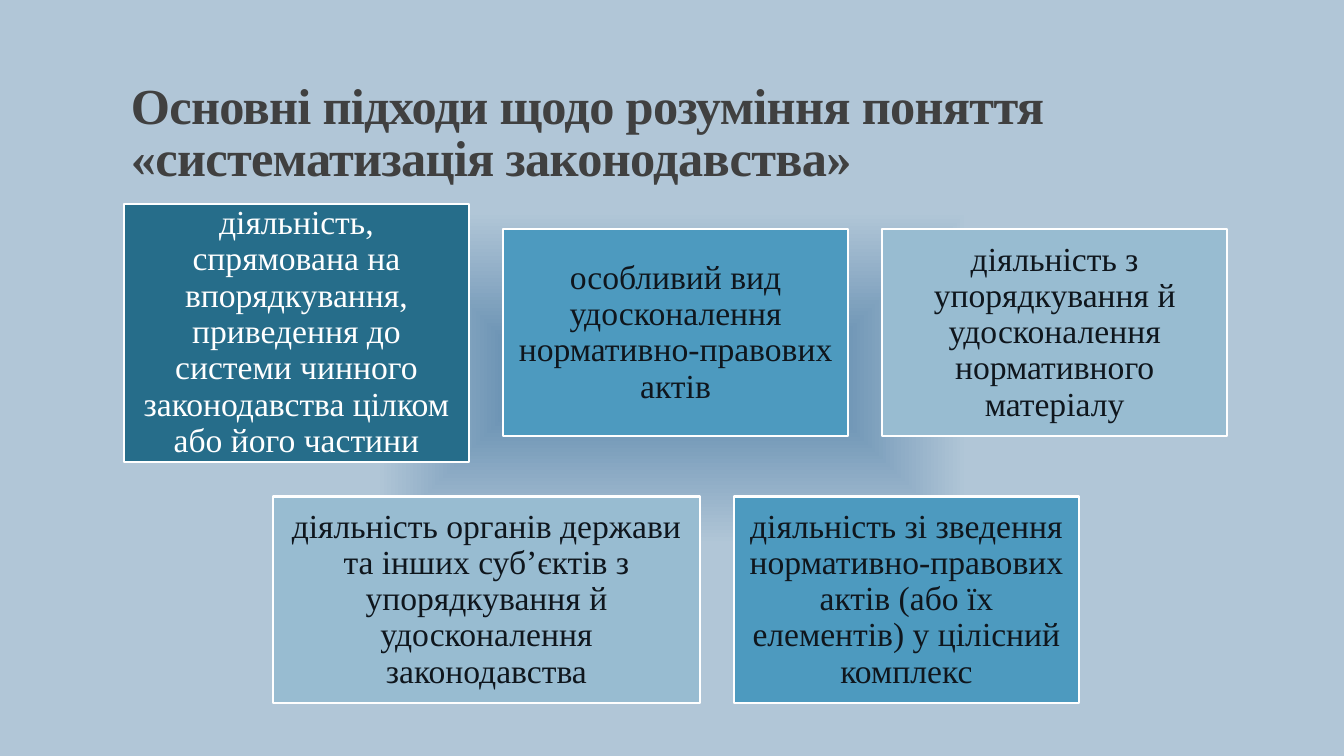
import pptx
import pptx.dml.color
import pptx.enum.shapes
import pptx.enum.text
import pptx.oxml
import pptx.util

Inches = pptx.util.Inches
Pt = pptx.util.Pt
RGBColor = pptx.dml.color.RGBColor

FONT = "Times New Roman"
TITLE_GREY = RGBColor(0x40, 0x40, 0x40)
DARK_TEXT = RGBColor(0x0F, 0x16, 0x1D)
WHITE = RGBColor(0xFF, 0xFF, 0xFF)
TEAL = RGBColor(0x26, 0x6D, 0x8A)
BLUE = RGBColor(0x4D, 0x9A, 0xBF)
PALE_BLUE = RGBColor(0x98, 0xBC, 0xD1)

GRADIENT_XML = """
<a:gradFill xmlns:a="http://schemas.openxmlformats.org/drawingml/2006/main" rotWithShape="1">
  <a:gsLst>
    <a:gs pos="0"><a:srgbClr val="5884AA"><a:alpha val="80000"/></a:srgbClr></a:gs>
    <a:gs pos="44000"><a:srgbClr val="B1C6D7"/></a:gs>
    <a:gs pos="100000"><a:srgbClr val="B1C6D7"/></a:gs>
  </a:gsLst>
  <a:path path="shape"><a:fillToRect l="50000" t="50000" r="50000" b="50000"/></a:path>
</a:gradFill>"""


def style_text(paragraph, size, color, line_spacing):
    paragraph.line_spacing = line_spacing
    font = paragraph.runs[0].font
    font.name = FONT
    font.size = Pt(size)
    font.color.rgb = color
    return font


presentation = pptx.Presentation()
presentation.slide_width = Inches(13.33)
presentation.slide_height = Inches(7.5)
slide = presentation.slides.add_slide(presentation.slide_layouts[6])

# Background glow
slide.background.fill.gradient()
gradient = slide.element.xpath(".//a:gradFill")[0]
gradient.getparent().replace(gradient, pptx.oxml.parse_xml(GRADIENT_XML))

# Title
title = slide.shapes.add_textbox(Inches(1.2), Inches(0.31), Inches(11), Inches(1.59))
title_frame = title.text_frame
title_frame.word_wrap = True
title_frame.vertical_anchor = pptx.enum.text.MSO_ANCHOR.BOTTOM
title_frame.text = "Основні підходи щодо розуміння поняття «систематизація законодавства»"
title_font = style_text(title_frame.paragraphs[0], 36, TITLE_GREY, 0.85)
title_font.bold = True
title_frame.paragraphs[0].runs[0]._r.get_or_add_rPr().set("spc", "-50")

# Rows of approaches: left edge, vertical centre, then width, height, fill, text colour, text
GAP = 0.34
rows = [
    (1.23, 3.3, [
        (3.42, 2.56, TEAL, WHITE,
         "діяльність, спрямована на впорядкування, приведення до системи чинного "
         "законодавства цілком або його частини"),
        (3.42, 2.05, BLUE, DARK_TEXT,
         "особливий вид удосконалення нормативно-правових актів"),
        (3.42, 2.05, PALE_BLUE, DARK_TEXT,
         "діяльність з упорядкування й удосконалення нормативного матеріалу"),
    ]),
    (2.71, 5.95, [
        (4.23, 2.05, PALE_BLUE, DARK_TEXT,
         "діяльність органів держави та інших суб’єктів з упорядкування й "
         "удосконалення законодавства"),
        (3.42, 2.05, BLUE, DARK_TEXT,
         "діяльність зі зведення нормативно-правових актів (або їх елементів) "
         "у цілісний комплекс"),
    ]),
]

for left, middle, approaches in rows:
    for width, height, fill_color, text_color, text in approaches:
        box = slide.shapes.add_shape(
            pptx.enum.shapes.MSO_SHAPE.RECTANGLE,
            Inches(left), Inches(middle - height / 2), Inches(width), Inches(height))
        box.shadow.inherit = False
        box.fill.solid()
        box.fill.fore_color.rgb = fill_color
        box.line.color.rgb = WHITE
        box.line.width = Pt(1.5)

        frame = box.text_frame
        frame.word_wrap = True
        frame.vertical_anchor = pptx.enum.text.MSO_ANCHOR.MIDDLE
        frame.margin_left = frame.margin_right = Inches(0.1)
        frame.margin_top = frame.margin_bottom = Inches(0.1)
        frame.text = text
        paragraph = frame.paragraphs[0]
        paragraph.alignment = pptx.enum.text.PP_ALIGN.CENTER
        style_text(paragraph, 24, text_color, 0.9)
        left += width + GAP

presentation.save("out.pptx")
